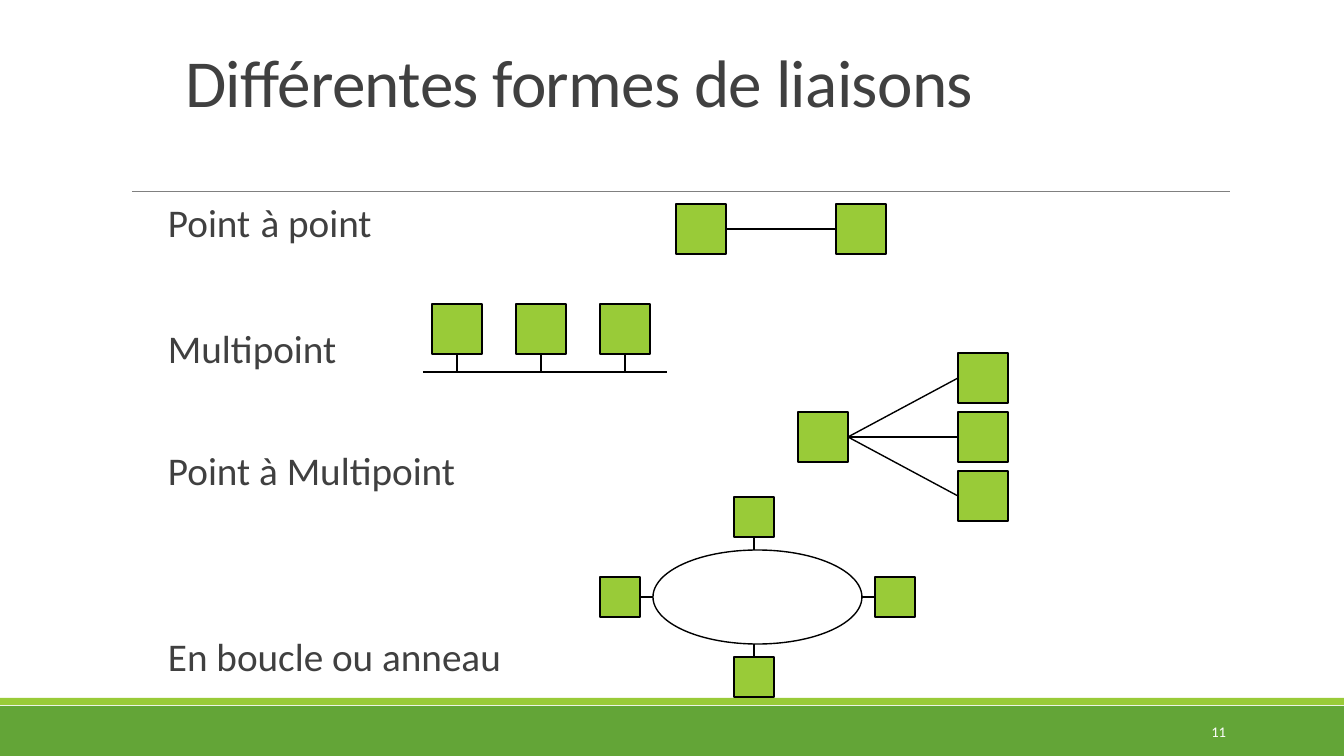
from dataclasses import dataclass

from lxml.etree import SubElement
from pptx import Presentation
from pptx.dml.color import RGBColor
from pptx.enum.shapes import MSO_CONNECTOR, MSO_SHAPE
from pptx.enum.text import MSO_ANCHOR, MSO_AUTO_SIZE, PP_ALIGN
from pptx.oxml.ns import qn
from pptx.util import Pt

EMU_PER_PX = 914400 / 100.8
WIDTH, HEIGHT = 1344, 756


@dataclass(frozen=True)
class Theme:
    font: str = "Calibri"
    text: str = "404040"
    lime: str = "99CB38"
    green: str = "63A537"
    rule: str = "808080"
    black: str = "000000"
    white: str = "FFFFFF"
    title_size: float = 48
    body_size: float = 28
    gap_size: float = 32
    number_size: float = 10.5


THEME = Theme()


def px(*lengths):
    return [round(n * EMU_PER_PX) for n in lengths]


def rgb(code):
    return RGBColor.from_string(code)


def format_run(r, size, color=THEME.text):
    r.font.name = THEME.font
    r.font.size = Pt(size)
    r.font.color.rgb = rgb(color)


def add_box(shapes, kind, box, fill=None, line=None):
    s = shapes.add_shape(kind, *px(*box))
    s.shadow.inherit = False
    if fill:
        s.fill.solid()
        s.fill.fore_color.rgb = rgb(fill)
    else:
        s.fill.background()
    if line:
        s.line.color.rgb = rgb(line)
        s.line.width = Pt(1)
    else:
        s.line.fill.background()


def add_node(shapes, x, y, size=50):
    add_box(shapes, MSO_SHAPE.RECTANGLE, (x, y, size, size), THEME.lime, THEME.black)


def add_line(shapes, x1, y1, x2, y2, color=THEME.black, width=1):
    c = shapes.add_connector(MSO_CONNECTOR.STRAIGHT, *px(x1, y1, x2, y2))
    c.line.color.rgb = rgb(color)
    c.line.width = Pt(width)
    SubElement(c._element.spPr, qn("a:effectLst"))


def add_text_frame(slide, box, anchor):
    tf = slide.shapes.add_textbox(*px(*box)).text_frame
    tf.word_wrap = True
    tf.vertical_anchor = anchor
    return tf


def add_frame(slide):
    """Draw the footer bands, the rule under the title and the page number."""
    add_box(slide.shapes, MSO_SHAPE.RECTANGLE, (0, 706, WIDTH, 50), THEME.green)
    add_box(slide.shapes, MSO_SHAPE.RECTANGLE, (0, 698, WIDTH, 7), THEME.lime)
    add_line(slide.shapes, 132, 191, 1230, 191, THEME.rule, 0.5)
    p = add_text_frame(slide, (1092, 712, 144, 40), MSO_ANCHOR.MIDDLE).paragraphs[0]
    p.text = "11"
    p.alignment = PP_ALIGN.RIGHT
    format_run(p.runs[0], THEME.number_size, THEME.white)


def set_title(slide, text):
    title = slide.shapes.title
    title.left, title.top, title.width, title.height = px(175, 8, 1010, 126 - 8)
    tf = title.text_frame
    tf.text = text
    tf.auto_size = MSO_AUTO_SIZE.NONE
    tf.vertical_anchor = MSO_ANCHOR.BOTTOM
    p = tf.paragraphs[0]
    p.alignment = PP_ALIGN.LEFT
    p.line_spacing = 0.85
    r = p.runs[0]
    format_run(r, THEME.title_size)
    r._r.get_or_add_rPr().set("spc", "-50")


def add_link_names(slide):
    tf = add_text_frame(slide, (158, 194, 420, 487), MSO_ANCHOR.TOP)
    tf.margin_left, tf.margin_right = px(10, 0)
    names = [
        (("Point", " ", "à point"), 0),
        (("Multipoint",), 59),
        (("Point à Multipoint",), 57),
        (("En boucle ou anneau",), 102),
    ]
    for i, (parts, space) in enumerate(names):
        p = tf.add_paragraph() if i else tf.paragraphs[0]
        p.line_spacing = 0.9
        p.space_before = Pt(space)
        for part in parts:
            r = p.add_run()
            r.text = part
            format_run(r, THEME.gap_size if part == " " else THEME.body_size)


def draw_point_to_point(shapes):
    for x in (676, 836):
        add_node(shapes, x, 204)
    add_line(shapes, 726, 229, 836, 229)


def draw_multipoint(shapes):
    add_line(shapes, 423, 372, 667, 372)
    for i in range(3):
        x = 432 + 84 * i
        add_line(shapes, x + 25, 372, x + 25, 354)
        add_node(shapes, x, 304)


def draw_point_to_multipoint(shapes):
    add_node(shapes, 798, 412)
    for i in range(3):
        y = 353 + 59 * i
        add_line(shapes, 848, 437, 958, y + 25)
        add_node(shapes, 958, y)


def draw_ring(shapes):
    left, top, width, height = 653, 550, 209, 94
    cx, cy, stub, size = 754, 597, 13, 40
    right, bottom, half = left + width, top + height, size // 2
    add_box(shapes, MSO_SHAPE.OVAL, (left, top, width, height), line=THEME.black)
    for x, y, dx, dy in (
        (cx, top, 0, -1),
        (right, cy, 1, 0),
        (cx, bottom, 0, 1),
        (left, cy, -1, 0),
    ):
        add_line(shapes, x, y, x + dx * stub, y + dy * stub)
        reach = stub + half
        add_node(shapes, x + dx * reach - half, y + dy * reach - half, size)


def main():
    prs = Presentation()
    prs.slide_width, prs.slide_height = px(WIDTH, HEIGHT)
    slide = prs.slides.add_slide(prs.slide_layouts[5])
    add_frame(slide)
    set_title(slide, "Différentes formes de liaisons")
    add_link_names(slide)
    for draw in (draw_point_to_point, draw_point_to_multipoint, draw_multipoint, draw_ring):
        draw(slide.shapes.add_group_shape().shapes)
    prs.save("out.pptx")


if __name__ == "__main__":
    main()
